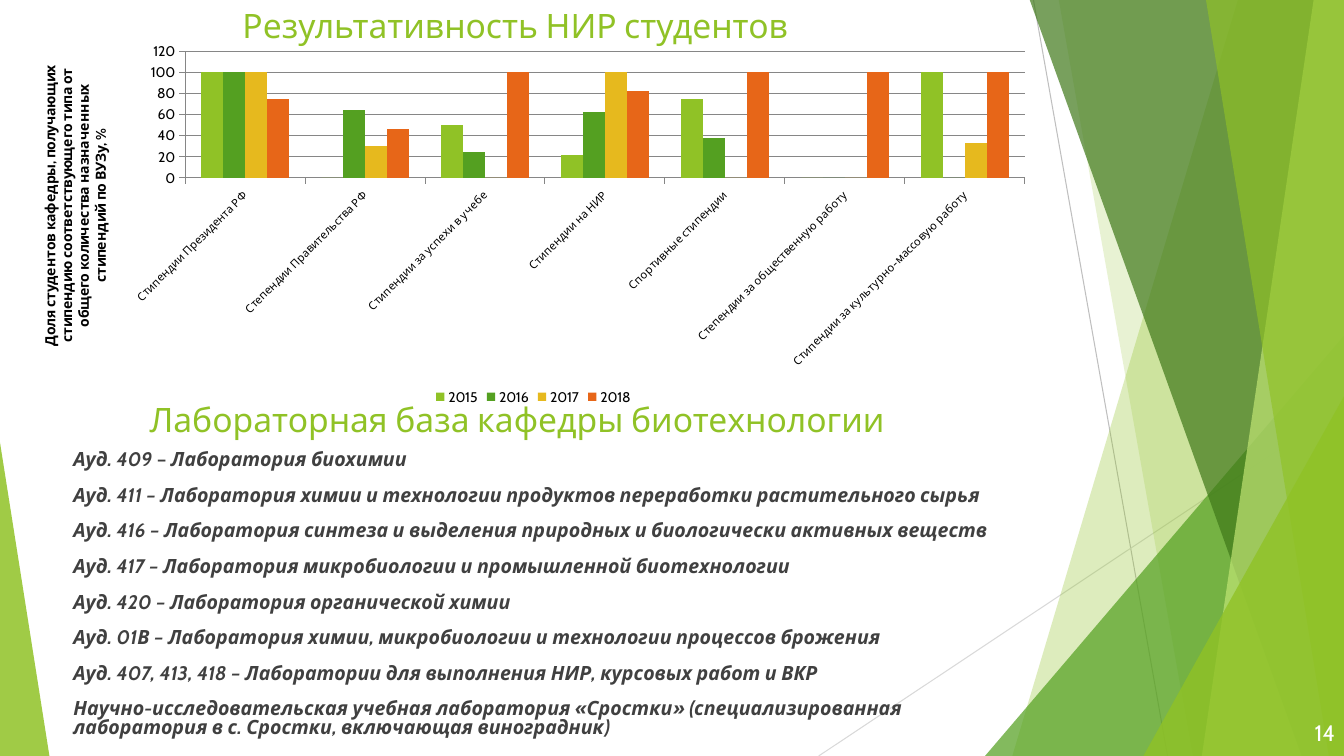
"""Builds the slide on student research results and laboratory rooms."""
from lxml.etree import SubElement
from pptx import Presentation
from pptx.chart.data import CategoryChartData
from pptx.dml.color import RGBColor
from pptx.enum.chart import XL_CHART_TYPE as CT, XL_LEGEND_POSITION as LP, XL_TICK_MARK as TM
from pptx.enum.shapes import MSO_CONNECTOR, MSO_SHAPE
from pptx.enum.text import MSO_ANCHOR, PP_ALIGN
from pptx.oxml import parse_xml
from pptx.oxml.ns import nsdecls, qn
from pptx.util import Inches, Pt

FONT = "Cabin"
COLORS = {
    "lime": "90C226", "green": "54A021", "gold": "E6B91E", "orange": "E76618",
    "forest": "3F7819", "pale": "C0E474", "text": "404040", "black": "000000",
    "white": "FFFFFF", "grid": "868686", "line": "BFBFBF", "light_line": "D9D9D9",
}
LINES = [(10.25, 0, 11.58, 7.5, "line"), (13.33, 4.03, 8.12, 7.5, "light_line")]
BACK_BANDS = [(12.28, 10.04, "lime", 30), (10.5, 11.83, "lime", 20)]
FRONT_BANDS = [(10.21, 12.91, "forest", 70), (13.03, 11.92, "pale", 70),
               (11.96, 13.18, "lime", 65)]
CATEGORIES = [
    "Стипендии Президента РФ", "Степендии Правительства РФ",
    "Стипендии за успехи в учебе", "Стипендии на НИР", "Спортивные стипендии",
    "Степендии за общественную работу", "Стипендии за культурно-массовую работу",
]
SERIES = [
    ("2015", (100, 0, 50, 22, 75, 0, 100), "lime"),
    ("2016", (100, 64, 25, 62, 38, 0, 0), "green"),
    ("2017", (100, 30, 0, 100, 0, 0, 33), "gold"),
    ("2018", (75, 46, 100, 82, 100, 100, 100), "orange"),
]
AXIS_TITLE = ("Доля студентов кафедры, получающих стипендию соответствующего типа "
              "от общего количества назначенных стипендий по ВУЗу, %")
ROOMS = [
    ("Ауд. 409 ", "– ", "Лаборатория биохимии"),
    ("Ауд. 411 – Лаборатория химии и технологии продуктов переработки растительного сырья",),
    ("Ауд. 416 – Лаборатория синтеза и выделения природных и биологически активных веществ",),
    ("Ауд. 417 – Лаборатория микробиологии и промышленной биотехнологии",),
    ("Ауд. 420 – Лаборатория органической химии",),
    ("Ауд. 01В – Лаборатория химии, микробиологии и технологии процессов брожения",),
    ("Ауд. 407, 413, 418 – Лаборатории для выполнения НИР, курсовых работ и ВКР",),
    ("Научно-исследовательская учебная лаборатория «Сростки» (специализированная "
     "лаборатория в с. Сростки, включающая виноградник)",),
]


def rgb(name):
    """Return a named colour."""
    return RGBColor.from_string(COLORS[name])


def set_font(font, size, color, bold=False):
    """Set the typeface, size, colour and weight of a font."""
    font.name, font.size, font.bold = FONT, Pt(size), bold
    font.color.rgb = rgb(color)


def add_line(s, x1, y1, x2, y2, color):
    """Draw a thin line."""
    line = s.shapes.add_connector(MSO_CONNECTOR.STRAIGHT, *map(Inches, (x1, y1, x2, y2)))
    line.line.color.rgb = rgb(color)
    line.line.width = Pt(0.75)
    SubElement(line._element.spPr, qn("a:effectLst"))


def paint(sp, color, opacity):
    """Give a shape a translucent fill with no outline."""
    sp.shadow.inherit = False
    sp.fill.solid()
    sp.fill.fore_color.rgb = rgb(color)
    sp.line.fill.background()
    clr = sp._element.spPr.find(qn("a:solidFill"))[0]
    SubElement(clr, qn("a:alpha")).set("val", str(opacity * 1000))


def add_band(s, top_x, bottom_x, color, opacity):
    """Draw a slanted band that runs to the right edge of the slide."""
    fb = s.shapes.build_freeform(Inches(top_x), Inches(-0.01))
    corners = [(13.33, -0.01), (13.33, 7.5), (bottom_x, 7.5)]
    fb.add_line_segments([(Inches(x), Inches(y)) for x, y in corners], close=True)
    paint(fb.convert_to_shape(), color, opacity)


def add_triangle(s, x, y, w, h, apex, color, opacity):
    """Draw a triangle with its apex at a share of its width."""
    sp = s.shapes.add_shape(MSO_SHAPE.ISOSCELES_TRIANGLE, *map(Inches, (x, y, w, h)))
    sp.adjustments[0] = apex
    paint(sp, color, opacity)


def add_frame(s, x, y, w, h):
    """Add a wrapping text box and return its text frame."""
    tf = s.shapes.add_textbox(*map(Inches, (x, y, w, h))).text_frame
    tf.word_wrap = True
    return tf


def add_label(s, box, text, size, color, align, anchor=MSO_ANCHOR.TOP):
    """Add a single line of text."""
    tf = add_frame(s, *box)
    tf.vertical_anchor = anchor
    p = tf.paragraphs[0]
    p.text, p.alignment = text, align
    set_font(p.font, size, color)


def add_rooms(s):
    """List the laboratory rooms."""
    tf = add_frame(s, 0.63, 4.43, 9.37, 3.1)
    for i, parts in enumerate(ROOMS):
        p = tf.add_paragraph() if i else tf.paragraphs[0]
        p.line_spacing = 0.8
        p.space_before = p.space_after = Pt(6)
        set_font(p.font, 14, "text", bold=True)
        for part in parts:
            r = p.add_run()
            r.text = part
            r.font.italic = part != "– "


def style_axis(axis, size):
    """Set the ticks, line and label font of an axis."""
    axis.major_tick_mark, axis.minor_tick_mark = TM.OUTSIDE, TM.NONE
    axis.format.line.color.rgb = rgb("grid")
    set_font(axis.tick_labels.font, size, "black")


def place_plot(chart, x, y, w, h):
    """Fix the inner plot area as shares of the chart."""
    area = chart._chartSpace.chart.plotArea
    for old in area.findall(qn("c:layout")):
        area.remove(old)
    sizes = "".join(f'<c:{k} val="{v}"/>' for k, v in zip("xywh", (x, y, w, h)))
    area.insert(0, parse_xml(
        f'<c:layout {nsdecls("c")}><c:manualLayout><c:layoutTarget val="inner"/>'
        f'<c:xMode val="edge"/><c:yMode val="edge"/>{sizes}</c:manualLayout></c:layout>'))


def add_scholarship_chart(s):
    """Add the clustered columns of scholarship shares by year."""
    data = CategoryChartData()
    data.categories = CATEGORIES
    for name, values, _ in SERIES:
        data.add_series(name, values)
    box = map(Inches, (0.21, 0.36, 10.16, 3.7))
    chart = s.shapes.add_chart(CT.COLUMN_CLUSTERED, *box, data).chart
    set_font(chart.font, 10, "black")
    chart.has_title = False
    chart.has_legend = True
    chart.legend.position = LP.BOTTOM
    chart.legend.include_in_layout = False
    plot = chart.plots[0]
    plot.gap_width, plot.overlap, plot.vary_by_categories = 150, 0, False
    for series, (_, _, color) in zip(plot.series, SERIES):
        series.format.fill.solid()
        series.format.fill.fore_color.rgb = rgb(color)
    cat, val = chart.category_axis, chart.value_axis
    style_axis(cat, 8)
    style_axis(val, 10)
    cat._element.find(qn("c:txPr")).find(qn("a:bodyPr")).set("rot", "-2700000")
    val.minimum_scale, val.maximum_scale, val.major_unit = 0, 120, 20
    val.major_gridlines.format.line.color.rgb = rgb("grid")
    tf = val.axis_title.text_frame
    tf.text = AXIS_TITLE
    set_font(tf.paragraphs[0].font, 10, "black", bold=True)
    tf._txBody.bodyPr.set("rot", "-5400000")
    tf._txBody.bodyPr.set("vert", "horz")
    place_plot(chart, 0.16, 0.04, 0.82, 0.34)


def main():
    """Build and save the slide."""
    prs = Presentation()
    prs.slide_width, prs.slide_height = Inches(13.33), Inches(7.5)
    s = prs.slides.add_slide(prs.slide_layouts[6])
    for line in LINES:
        add_line(s, *line)
    for band in BACK_BANDS:
        add_band(s, *band)
    add_triangle(s, 9.77, 3.33, 3.56, 4.17, 1, "green", 72)
    for band in FRONT_BANDS:
        add_band(s, *band)
    add_triangle(s, 11.34, 3.93, 1.99, 3.57, 1, "lime", 80)
    add_triangle(s, 0, 4.39, 0.49, 3.11, 0, "lime", 85)
    add_label(s, (0.04, 0, 10.14, 0.6), "Результативность НИР студентов",
              24, "lime", PP_ALIGN.CENTER)
    add_label(s, (12.59, 7.07, 0.75, 0.4), "14", 16, "white",
              PP_ALIGN.RIGHT, MSO_ANCHOR.MIDDLE)
    add_scholarship_chart(s)
    add_label(s, (0.63, 3.91, 9, 0.79), "Лабораторная база кафедры биотехнологии",
              24, "lime", PP_ALIGN.CENTER)
    add_rooms(s)
    prs.save("out.pptx")


if __name__ == "__main__":
    main()
